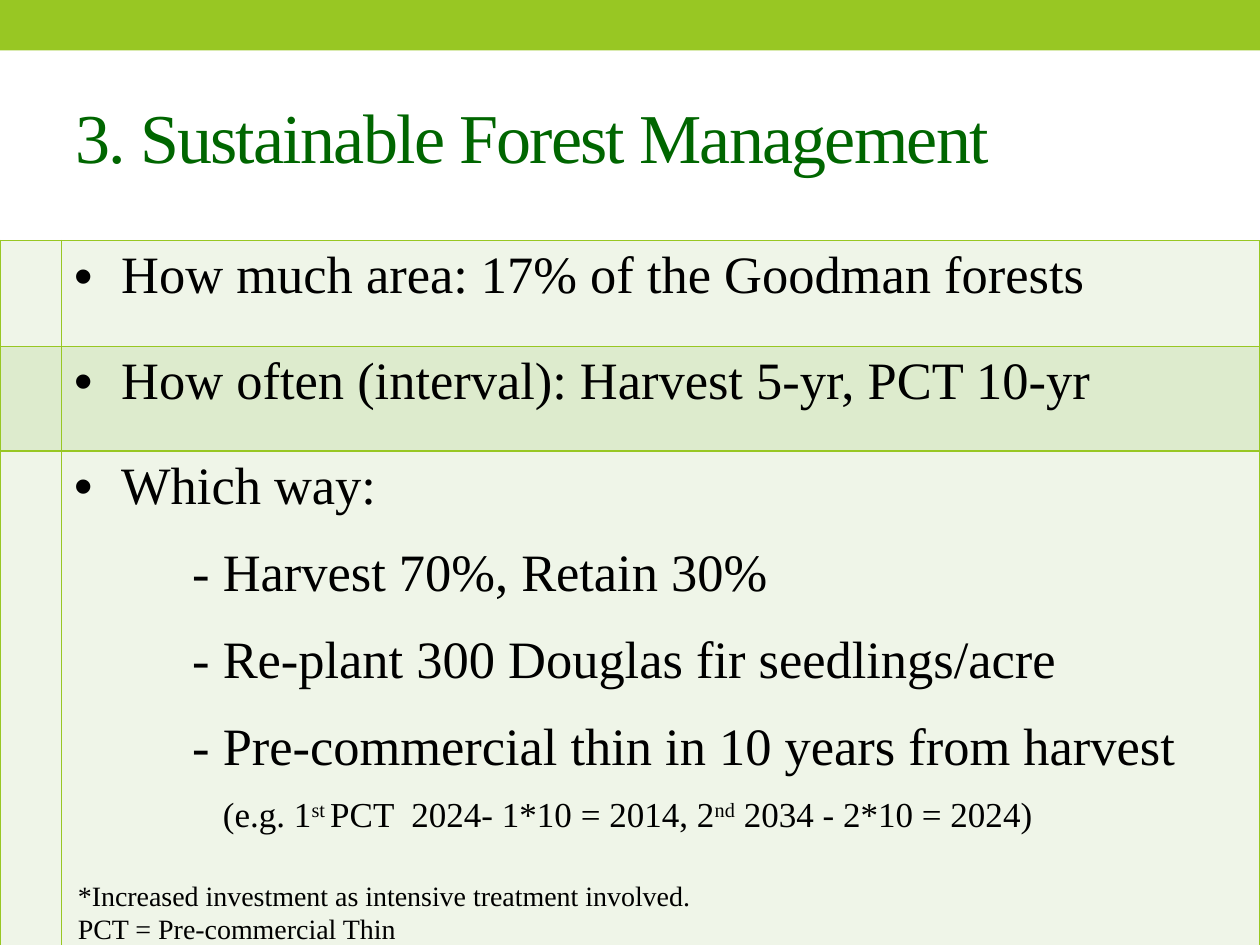
import pptx
import pptx.dml.color
import pptx.enum.shapes
import pptx.enum.text
import pptx.oxml
import pptx.oxml.ns
import pptx.util
from lxml import etree

Cm = pptx.util.Cm
Pt = pptx.util.Pt
RGBColor = pptx.dml.color.RGBColor
ANCHOR = pptx.enum.text.MSO_ANCHOR

FONT = "Times New Roman"
LIME = RGBColor(0x98, 0xC7, 0x23)
DARK_GREEN = RGBColor(0x00, 0x66, 0x00)
BLACK = RGBColor(0x00, 0x00, 0x00)
PALE_BAND = RGBColor(0xEF, 0xF5, 0xE8)
DEEP_BAND = RGBColor(0xDD, 0xEB, 0xCD)

COLUMN_WIDTHS = (Cm(1.24), Cm(24.16))
ROW_HEIGHTS = (Cm(2.13), Cm(2.11), Cm(10.16))
SUPERSCRIPT = "30000"


def add_child(parent, tag, **attributes):
    """Append a DrawingML element."""
    return etree.SubElement(parent, pptx.oxml.ns.qn(tag), attributes)


def write_text(paragraph, text, size=30, color=BLACK, spacing=None, raised=False):
    """Add one formatted run to a paragraph."""
    run = paragraph.add_run()
    run.text = text
    run.font.name = FONT
    run.font.size = Pt(size)
    run.font.color.rgb = color
    properties = run.font._element
    if spacing is not None:
        properties.set("spc", str(int(spacing * 100)))
    if raised:
        properties.set("baseline", SUPERSCRIPT)


def set_indent(paragraph, left, first=0):
    properties = paragraph._p.get_or_add_pPr()
    properties.set("marL", str(int(left)))
    properties.set("indent", str(int(first)))
    return properties


def write_bullet(paragraph, text):
    properties = set_indent(paragraph, Cm(0.95), -Cm(0.95))
    add_child(add_child(properties, "a:spcBef"), "a:spcPct", val="20000")
    add_child(properties, "a:buFont", typeface="Arial")
    add_child(properties, "a:buChar", char="•")
    write_text(paragraph, text)


def add_detail(text_frame, left):
    """Add an indented, widely spaced paragraph below a bullet."""
    paragraph = text_frame.add_paragraph()
    set_indent(paragraph, left)
    paragraph.line_spacing = 1.5
    return paragraph


def add_text_box(slide, left, top, width, height, lines, anchor=ANCHOR.TOP, **text_format):
    text_frame = slide.shapes.add_textbox(left, top, width, height).text_frame
    text_frame.word_wrap = True
    text_frame.vertical_anchor = anchor
    for index, line in enumerate(lines):
        paragraph = text_frame.add_paragraph() if index else text_frame.paragraphs[0]
        write_text(paragraph, line, **text_format)


def add_bar(slide, width, height):
    bar = slide.shapes.add_shape(pptx.enum.shapes.MSO_SHAPE.RECTANGLE, 0, 0, width, height)
    bar.shadow.inherit = False
    bar.fill.solid()
    bar.fill.fore_color.rgb = LIME
    bar.line.fill.background()


def style_cell(cell, fill_color):
    properties = cell._tc.get_or_add_tcPr()
    for side in ("a:lnL", "a:lnR", "a:lnT", "a:lnB"):
        border = add_child(properties, side, w=str(int(Pt(1))))
        add_child(add_child(border, "a:solidFill"), "a:srgbClr", val=str(LIME))
    cell.fill.solid()
    cell.fill.fore_color.rgb = fill_color


def add_plan_table(slide, bullets):
    table = slide.shapes.add_table(
        len(bullets), len(COLUMN_WIDTHS), 0, Cm(4.85), sum(COLUMN_WIDTHS), sum(ROW_HEIGHTS)
    ).table
    table.first_row = False
    for column, width in zip(table.columns, COLUMN_WIDTHS):
        column.width = width
    for index, (row, height, bullet) in enumerate(zip(table.rows, ROW_HEIGHTS, bullets)):
        row.height = height
        for cell in row.cells:
            style_cell(cell, DEEP_BAND if index % 2 else PALE_BAND)
        write_bullet(row.cells[1].text_frame.paragraphs[0], bullet)
    return table


def main():
    presentation = pptx.Presentation()
    presentation.slide_width = Cm(25.4)
    presentation.slide_height = Cm(19.05)
    slide = presentation.slides.add_slide(presentation.slide_layouts[6])

    # Top band and title
    add_bar(slide, presentation.slide_width, Cm(1.02))
    add_text_box(slide, Cm(1.27), Cm(1.47), Cm(22.86), Cm(2.54),
                 ["3. Sustainable Forest Management"],
                 anchor=ANCHOR.MIDDLE, size=40, color=DARK_GREEN, spacing=-1)

    # Management plan
    table = add_plan_table(slide, (
        "How much area: 17% of the Goodman forests",
        "How often (interval): Harvest 5-yr, PCT 10-yr",
        "Which way:",
    ))
    method_frame = table.cell(2, 1).text_frame
    for step in (
        "- Harvest 70%, Retain 30%",
        "- Re-plant 300 Douglas fir seedlings/acre",
        "- Pre-commercial thin in 10 years from harvest",
    ):
        write_text(add_detail(method_frame, Cm(2.38)), step)

    # Worked example with raised ordinals
    example = add_detail(method_frame, Cm(3))
    for text, raised in (
        ("(e.g. 1", False),
        ("st ", True),
        ("PCT  2024- 1*10 = 2014, 2", False),
        ("nd", True),
        (" 2034 - 2*10 = 2024)", False),
    ):
        write_text(example, text, size=20, raised=raised)

    # Footnote
    add_text_box(slide, Cm(1.32), Cm(17.58), Cm(15.88), Cm(1.63),
                 ["*Increased investment as intensive treatment involved.",
                  "PCT = Pre-commercial Thin"], size=16)

    presentation.save("out.pptx")


if __name__ == "__main__":
    main()
